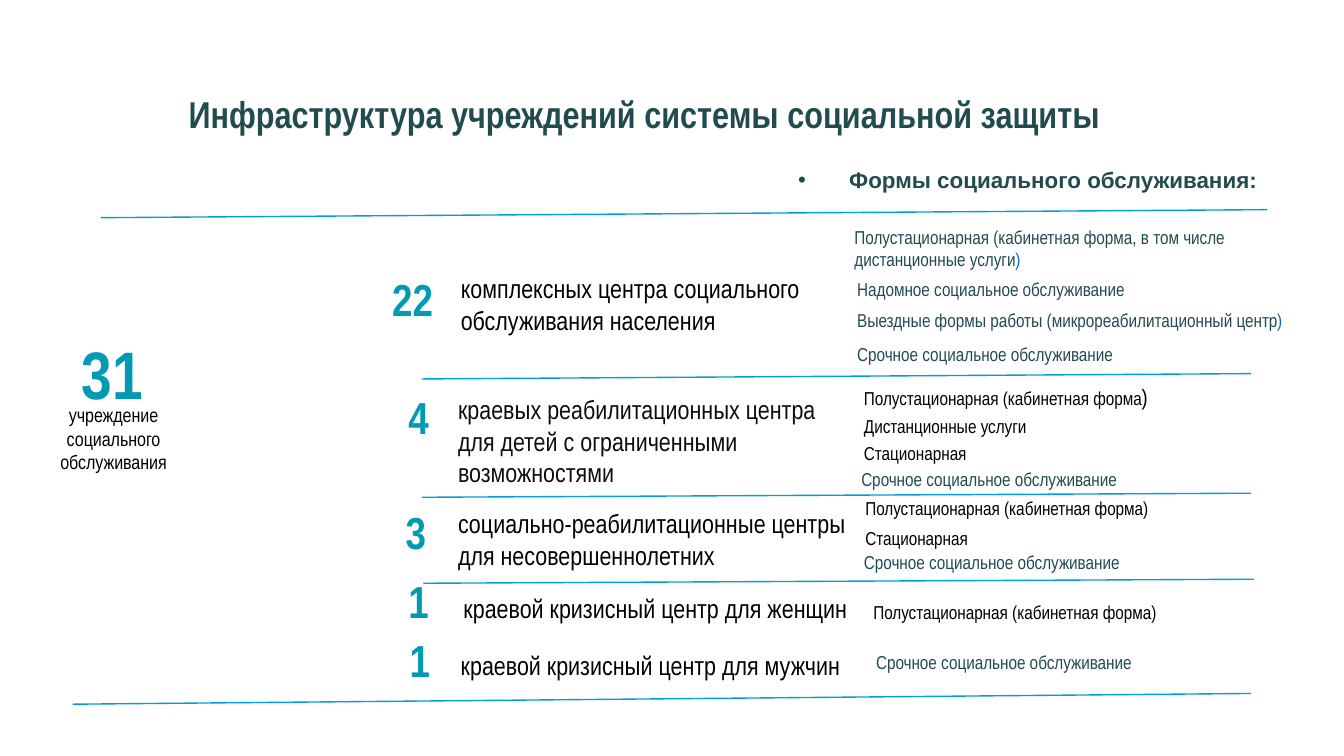
from lxml.etree import SubElement
from pptx import Presentation
from pptx.dml.color import RGBColor
from pptx.enum.shapes import MSO_CONNECTOR
from pptx.enum.text import MSO_ANCHOR, PP_ALIGN
from pptx.oxml.ns import qn
from pptx.util import Inches, Pt

TEAL, DARK, BLACK = "009AB3", "224B50", "000000"
RULE, BLUE, INK = "009ED6", "0070C0", "0D0D0D"
NARROW = "Arial Narrow"

deck = Presentation()
deck.slide_width = Inches(10)
deck.slide_height = deck.slide_width * 9 // 16
CELL = deck.slide_width / 100  # square grid, 100 columns wide


def style(font, size, hue, bold=False, name=NARROW):
    font.name, font.size, font.bold = name, Pt(size), bold
    font.color.rgb = RGBColor.from_string(hue)


def write(col, row, wide, high, text, size, hue, bold=False, align=PP_ALIGN.LEFT):
    """Add a text box, one paragraph a line; lengths are in grid cells."""
    box = slide.shapes.add_textbox(*(round(n * CELL) for n in (col, row, wide, high)))
    frame = box.text_frame
    frame.word_wrap = True
    frame.text = text
    for para in frame.paragraphs:
        para.alignment = align
        style(para.font, size, hue, bold)
    return frame.paragraphs[0]


slide = deck.slides.add_slide(deck.slide_layouts[5])

# Title
title = slide.shapes.title
title.left, title.top, title.width, title.height = (
    round(n * CELL) for n in (3.1, 3, 89.7, 10.9))
title.text_frame.text = "Инфраструктура учреждений системы социальной защиты"
title.text_frame.vertical_anchor = MSO_ANCHOR.MIDDLE
head = title.text_frame.paragraphs[0]
head.alignment = PP_ALIGN.CENTER
style(head.font, 20, DARK, True)

# Heading of the right column
head = write(58.4, 11.9, 38.1, 39, "Формы социального обслуживания:", 12, DARK, True)
props = head._p.get_or_add_pPr()
props.set("marL", str(Inches(0.38)))
props.set("indent", str(-Inches(0.38)))
SubElement(props, qn("a:buFont")).set("typeface", "Arial")
SubElement(props, qn("a:buChar")).set("char", "•")
props.append(props.find(qn("a:defRPr")))  # bullet marks come before it
style(head.font, 12, DARK, True, "Arial")

# Total on the left
write(2.8, 24.2, 11.1, 7.1, "31", 36, TEAL, True, PP_ALIGN.CENTER)
write(1.2, 29.5, 14.5, 6.3, "учреждение социального обслуживания", 10.5, BLACK,
      align=PP_ALIGN.CENTER)

# Rules between the groups
for left, start, right, end in [
    (7.5, 16.2, 94.3, 15.6),
    (31.4, 28.2, 93.1, 27.8),
    (31.4, 37, 93.1, 36.7),
    (31.5, 43.4, 93.3, 43.1),
    (5.4, 52.4, 93.1, 51.6),
]:
    rule = slide.shapes.add_connector(
        MSO_CONNECTOR.STRAIGHT, *(round(n * CELL) for n in (left, start, right, end)))
    rule.line.color.rgb = RGBColor.from_string(RULE)
    rule.line.width = Pt(0.75)
    SubElement(rule._element.spPr, qn("a:effectLst"))

# Counts: column, row, number
for col, row, count in [
    (28.2, 19.7, "22"),
    (29.4, 28.5, "4"),
    (29.2, 37.1, "3"),
    (29.4, 42.2, "1"),
    (29.5, 46.6, "1"),
]:
    write(col, row, 2 + 1.6 * len(count), 5, count, 24, TEAL, True)

# Kinds of centre: column, row, width, colour, lines
for col, row, wide, hue, text in [
    (33.3, 19.8, 27.9, BLACK, "комплексных центра социального\nобслуживания населения"),
    (33.1, 28.8, 29.3, INK,
     "краевых реабилитационных центра\nдля детей с ограниченными\nвозможностями"),
    (33.1, 37.3, 31.6, BLACK,
     "социально-реабилитационные центры\nдля несовершеннолетних"),
    (33.5, 43.6, 31.1, BLACK, "краевой кризисный центр для женщин"),
    (33.3, 47.8, 30.7, BLACK, "краевой кризисный центр для мужчин"),
]:
    write(col, row, wide, 1 + 2.35 * len(text.split("\n")), text, 14, hue)

# Forms of service: column, row, width, colour, text
URGENT = "Срочное социальное обслуживание"
HALF = "Полустационарная (кабинетная форма"
for col, row, wide, hue, text in [
    (62.8, 20.2, 22.4, DARK, "Надомное социальное обслуживание"),
    (62.8, 25, 21.2, DARK, URGENT),
    (63.3, 30.4, 14.9, BLACK, "Дистанционные услуги"),
    (63.3, 32.4, 11, BLACK, "Стационарная"),
    (63.1, 34.3, 21.2, DARK, URGENT),
    (63.4, 36.5, 23.7, BLACK, HALF + ")"),
    (63.4, 38.7, 11, BLACK, "Стационарная"),
    (63.3, 40.5, 21.2, DARK, URGENT),
    (64, 44.2, 23.7, BLACK, HALF + ")"),
    (64.2, 47.9, 21.2, DARK, URGENT),
]:
    write(col, row, wide, 2.7, text, 10, hue)

# Forms whose closing bracket has its own look
for col, row, wide, high, hue, text, size, tint in [
    (62.6, 16.3, 37, 4.4, DARK,
     "Полустационарная (кабинетная форма, в том числе дистанционные услуги", 10, BLUE),
    (62.8, 22.5, 35.4, 2.7, DARK,
     "Выездные формы работы (микрореабилитационный центр", 10, BLUE),
    (63.3, 28, 23.8, 3, BLACK, HALF, 12, BLACK),
]:
    mark = write(col, row, wide, high, text, 10, hue).add_run()
    mark.text = ")"
    style(mark.font, size, tint)

deck.save("out.pptx")
